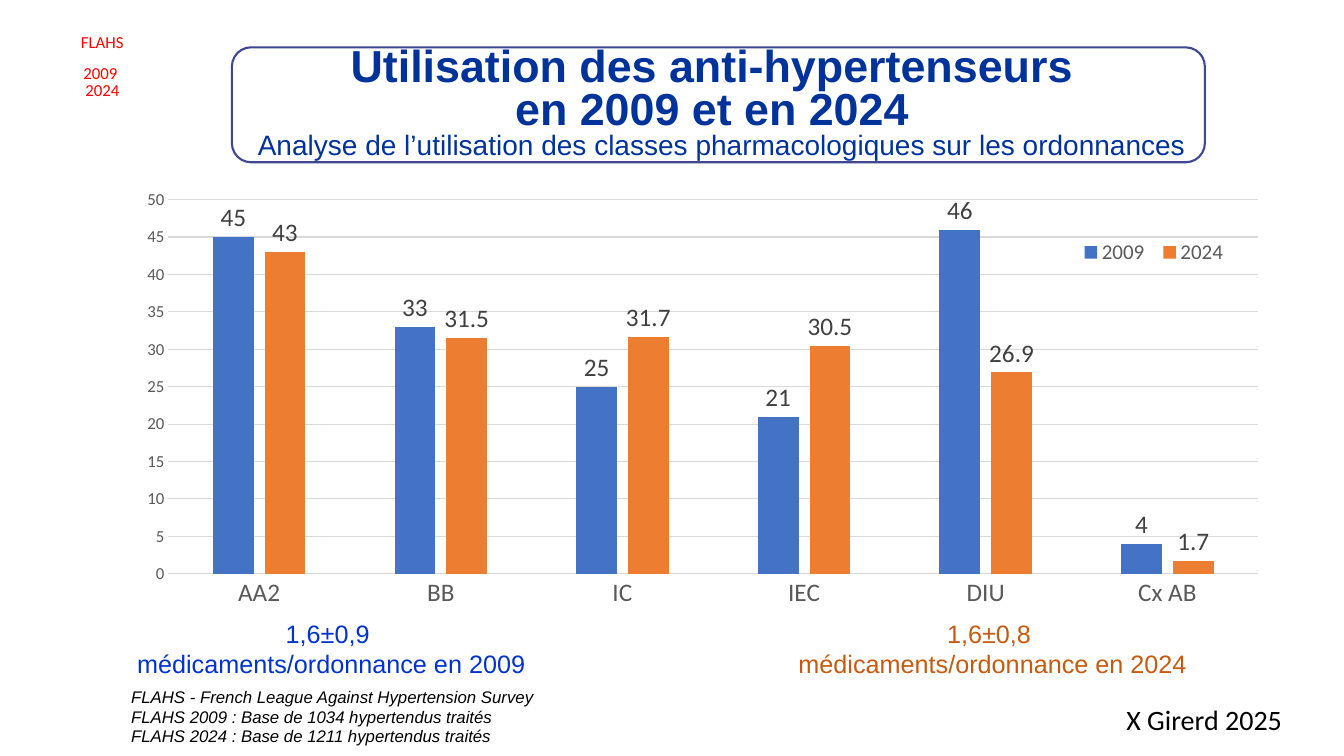
import pptx
import pptx.util
import pptx.dml.color
import pptx.chart.data
import pptx.enum.chart
import pptx.enum.shapes
import pptx.enum.text
from lxml import etree

Inches, Pt = pptx.util.Inches, pptx.util.Pt
Color = pptx.dml.color.RGBColor
Align = pptx.enum.text.PP_ALIGN
Anchor = pptx.enum.text.MSO_ANCHOR
Fit = pptx.enum.text.MSO_AUTO_SIZE
Shape = pptx.enum.shapes.MSO_SHAPE
Kind = pptx.enum.chart

NAVY = Color(0x00, 0x33, 0x99)
FRAME = Color(0x3F, 0x47, 0x93)
BLUE = Color(0x00, 0x33, 0xCC)
RUST = Color(0xC5, 0x5A, 0x11)
RED = Color(0xFF, 0x00, 0x00)
BLACK = Color(0x00, 0x00, 0x00)
WHITE = Color(0xFF, 0xFF, 0xFF)
GRID = Color(0xD9, 0xD9, 0xD9)
GREY = Color(0x59, 0x59, 0x59)
DARK = Color(0x40, 0x40, 0x40)
BARS = [Color(0x44, 0x72, 0xC4), Color(0xED, 0x7D, 0x31)]

CLASSES = ["AA2", "BB", "IC", "IEC", "DIU", "Cx AB"]
RATES = {"2009": [45, 33, 25, 21, 46, 4],
         "2024": [43, 31.5, 31.7, 30.5, 26.9, 1.7]}


def box(*sizes):
    return [Inches(size) for size in sizes]


def style(font, size, color, name="Calibri", bold=False, italic=False):
    font.size, font.name = Pt(size), name
    font.bold, font.italic = bold, italic
    font.color.rgb = color


def add_run(para, text, *look, **marks):
    run = para.add_run()
    run.text = text
    style(run.font, *look, **marks)


def add_paras(frame, lines, *look, align=Align.LEFT, space=None, **marks):
    paras = []
    for i, line in enumerate(lines):
        para = frame.add_paragraph() if i else frame.paragraphs[0]
        para.alignment = align
        if space:
            para.line_spacing = space
        add_run(para, line, *look, **marks)
        paras.append(para)
    return paras


def add_box(slide, place, lines, *look, wrap=False, **marks):
    frame = slide.shapes.add_textbox(*box(*place)).text_frame
    frame.word_wrap = wrap
    frame.auto_size = Fit.SHAPE_TO_FIT_TEXT
    add_paras(frame, lines, *look, **marks)
    return frame


def add_panel(slide, kind, place):
    shape = slide.shapes.add_shape(kind, *box(*place))
    shape.shadow.inherit = False
    return shape


def add_title(slide):
    place = (2.3, 0.47, 9.65, 1.14)
    panel = add_panel(slide, Shape.ROUNDED_RECTANGLE, place)
    panel.fill.background()
    panel.line.color.rgb = FRAME
    panel.line.width = Pt(1.5)

    title = slide.shapes.title
    title.left, title.top, title.width, title.height = box(*place)
    frame = title.text_frame
    frame.word_wrap = True
    frame.auto_size = Fit.NONE
    frame.vertical_anchor = Anchor.MIDDLE
    lines = ["Utilisation des anti-hypertenseurs ", "en 2009 et en 2024 "]
    paras = add_paras(frame, lines, 32, NAVY, "Arial", bold=True,
                      align=Align.CENTER, space=0.8)
    paras[1].add_line_break()
    add_run(paras[1], " ", 18, NAVY, "Arial")
    add_run(paras[1], "Analyse de l’utilisation des classes pharmacologiques"
            " sur les ordonnances", 20, NAVY, "Arial")


def add_survey(slide):
    panel = add_panel(slide, Shape.RECTANGLE, (-0.09, 0.25, 2.21, 0.83))
    panel.fill.solid()
    panel.fill.fore_color.rgb = WHITE
    panel.line.fill.background()
    frame = panel.text_frame
    frame.vertical_anchor = Anchor.TOP
    paras = add_paras(frame, ["FLAHS", "2009 ", "2024"], 12, RED,
                      align=Align.CENTER, space=1.1)
    for para in paras[1:]:
        para.space_before = Pt(6)
    paras[2].line_spacing = 0.3


def set_layout(part, x, y, w, h, inner=False):
    """Place a chart part by fractions of the chart area."""
    space = "http://schemas.openxmlformats.org/drawingml/2006/chart"
    tag = "{%s}" % space
    for old in part.findall(tag + "layout"):
        part.remove(old)
    layout = etree.Element(tag + "layout")
    manual = etree.SubElement(layout, tag + "manualLayout")
    pairs = [("layoutTarget", "inner")] if inner else []
    pairs += [("xMode", "edge"), ("yMode", "edge"),
              ("x", x), ("y", y), ("w", w), ("h", h)]
    for name, value in pairs:
        etree.SubElement(manual, tag + name).set("val", str(value))
    before = part.find(tag + "legendPos")
    if before is None:
        part.insert(0, layout)
    else:
        before.addnext(layout)


def add_bars(slide):
    data = pptx.chart.data.CategoryChartData()
    data.categories = CLASSES
    for year, rates in RATES.items():
        data.add_series(year, rates)
    chart = slide.shapes.add_chart(
        Kind.XL_CHART_TYPE.COLUMN_CLUSTERED,
        *box(1.21, 1.79, 11.5, 4.76), data).chart
    chart.has_title = False
    style(chart.font, 10, BLACK)

    # Bars and their values
    plot = chart.plots[0]
    plot.gap_width, plot.overlap = 219, -27
    plot.vary_by_categories = False
    for series, color in zip(plot.series, BARS):
        series.format.fill.solid()
        series.format.fill.fore_color.rgb = color
        labels = series.data_labels
        labels.show_value = True
        labels.position = Kind.XL_LABEL_POSITION.OUTSIDE_END
        style(labels.font, 18, DARK)

    # Axes
    cats, vals = chart.category_axis, chart.value_axis
    for axis, size in ((cats, 18), (vals, 12)):
        axis.major_tick_mark = Kind.XL_TICK_MARK.NONE
        axis.minor_tick_mark = Kind.XL_TICK_MARK.NONE
        style(axis.tick_labels.font, size, GREY)
    vals.minimum_scale, vals.maximum_scale, vals.major_unit = 0, 50, 5
    vals.format.line.fill.background()
    for line in (cats.format.line, vals.major_gridlines.format.line):
        line.color.rgb = GRID
        line.width = Pt(0.75)

    # Legend
    chart.has_legend = True
    legend = chart.legend
    legend.position = Kind.XL_LEGEND_POSITION.BOTTOM
    legend.include_in_layout = True
    style(legend.font, 15, GREY)
    set_layout(legend._element, 0.82, 0.11, 0.14, 0.08)
    set_layout(chart._chartSpace.chart.plotArea, 0.04, 0.04, 0.94, 0.78, True)


def main():
    deck = pptx.Presentation()
    deck.slide_width, deck.slide_height = box(13.33, 7.5)
    slide = deck.slides.add_slide(deck.slide_layouts[5])
    add_title(slide)

    # Sources
    notes = ["FLAHS - French League Against Hypertension Survey",
             "FLAHS 2009 : Base de 1034 hypertendus traités",
             "FLAHS 2024 : Base de 1211 hypertendus traités"]
    frame = add_box(slide, (1.3, 6.82, 9.09, 0.59), notes, 12, BLACK, "Arial",
                    italic=True, wrap=True, space=Pt(14))
    frame.margin_left = frame.margin_right = 0
    frame.margin_top = frame.margin_bottom = 0

    add_survey(slide)
    add_bars(slide)

    # Mean number of drugs per year
    for left, mean, year, color in ((1.17, "1,6±0,9", "2009", BLUE),
                                    (7.73, "1,6±0,8", "2024", RUST)):
        lines = [mean, " médicaments/ordonnance en " + year]
        add_box(slide, (left, 6.08, 4.16, 0.71), lines, 18, color, "Arial",
                align=Align.CENTER)

    # Author
    add_box(slide, (11.01, 6.92, 1.82, 0.44), [" X Girerd 2025"], 20, BLACK)
    deck.save("out.pptx")


if __name__ == "__main__":
    main()
